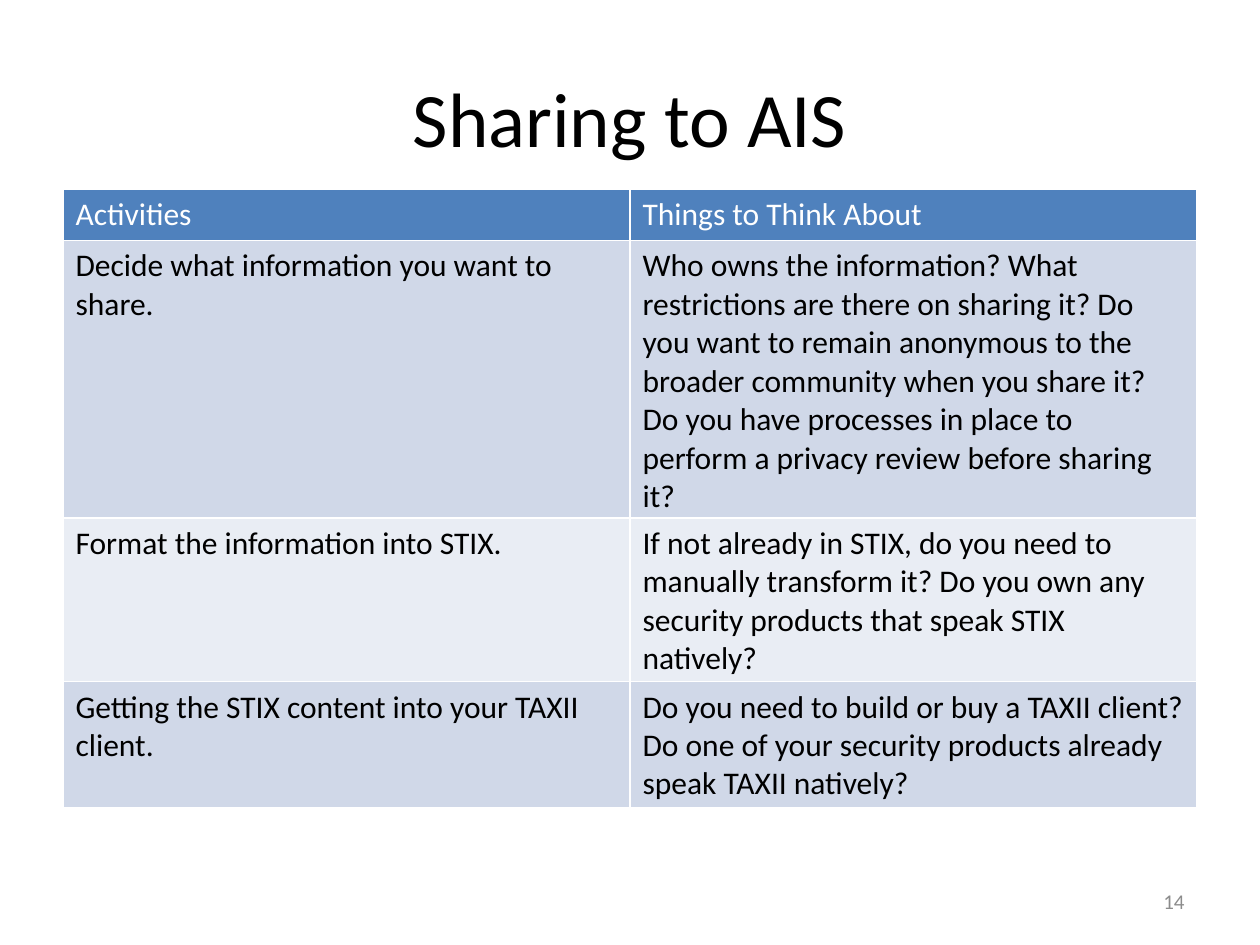
from dataclasses import dataclass

from pptx import Presentation
from pptx.dml.color import RGBColor
from pptx.enum.text import MSO_ANCHOR, PP_ALIGN
from pptx.util import Inches, Pt

CENTER, RIGHT = PP_ALIGN.CENTER, PP_ALIGN.RIGHT
MIDDLE = MSO_ANCHOR.MIDDLE
FONT = "Calibri"
BLANK_LAYOUT = 6
COLORS = {
    "text": "000000",
    "header_text": "FFFFFF",
    "page_number": "8C8C8C",
    "header": "4F81BD",
    "band_dark": "D0D8E8",
    "band_light": "E9EDF4",
}


@dataclass
class Label:
    text: str
    left: float
    top: float
    width: float
    height: float
    size: int
    color: str
    align: PP_ALIGN


@dataclass
class Step:
    activity: str
    questions: str


LABELS = [
    Label("Sharing to AIS", 0.5, 0.3, 9, 1.25, 44, "text", CENTER),
    Label("14", 7.17, 6.95, 2.33, 0.4, 12, "page_number", RIGHT),
]
HEADER = Step("Activities", "Things to Think About")
STEPS = [
    Step("Decide what information you want to share.",
         "Who owns the information? What restrictions are there on sharing it? "
         "Do you want to remain anonymous to the broader community when you share it? "
         "Do you have processes in place to perform a privacy review before sharing it?"),
    Step("Format the information into STIX.",
         "If not already in STIX, do you need to manually transform it? "
         "Do you own any security products that speak STIX natively?"),
    Step("Getting the STIX content into your TAXII client.",
         "Do you need to build or buy a TAXII client? "
         "Do one of your security products already speak TAXII natively?"),
]


def rgb(name: str) -> RGBColor:
    return RGBColor.from_string(COLORS[name])


def write(text_frame, text: str, size: int, color: str) -> None:
    text_frame.text = text
    font = text_frame.paragraphs[0].runs[0].font
    font.name = FONT
    font.size = Pt(size)
    font.bold = False
    font.color.rgb = rgb(color)


def draw_label(page, label: Label) -> None:
    box = page.shapes.add_textbox(Inches(label.left), Inches(label.top),
                                  Inches(label.width), Inches(label.height))
    frame = box.text_frame
    frame.word_wrap = True
    frame.vertical_anchor = MIDDLE
    write(frame, label.text, label.size, label.color)
    frame.paragraphs[0].alignment = label.align


def draw_table(page, steps: list[Step]) -> None:
    # Rows start one line high and grow to fit their text
    table = page.shapes.add_table(len(steps), 2, Inches(0.5), Inches(1.5),
                                  Inches(9), Inches(0.41 * len(steps))).table
    for row, step in enumerate(steps):
        if row == 0:
            fill, color = "header", "header_text"
        else:
            fill, color = ("band_dark" if row % 2 else "band_light"), "text"
        for column, text in enumerate((step.activity, step.questions)):
            cell = table.cell(row, column)
            cell.fill.solid()
            cell.fill.fore_color.rgb = rgb(fill)
            write(cell.text_frame, text, 18, color)


def main() -> None:
    deck = Presentation()
    deck.slide_width, deck.slide_height = Inches(10), Inches(7.5)
    page = deck.slides.add_slide(deck.slide_layouts[BLANK_LAYOUT])

    # Title and page number
    for label in LABELS:
        draw_label(page, label)

    # Activities and the questions they raise
    draw_table(page, [HEADER, *STEPS])

    deck.save("out.pptx")


if __name__ == "__main__":
    main()
